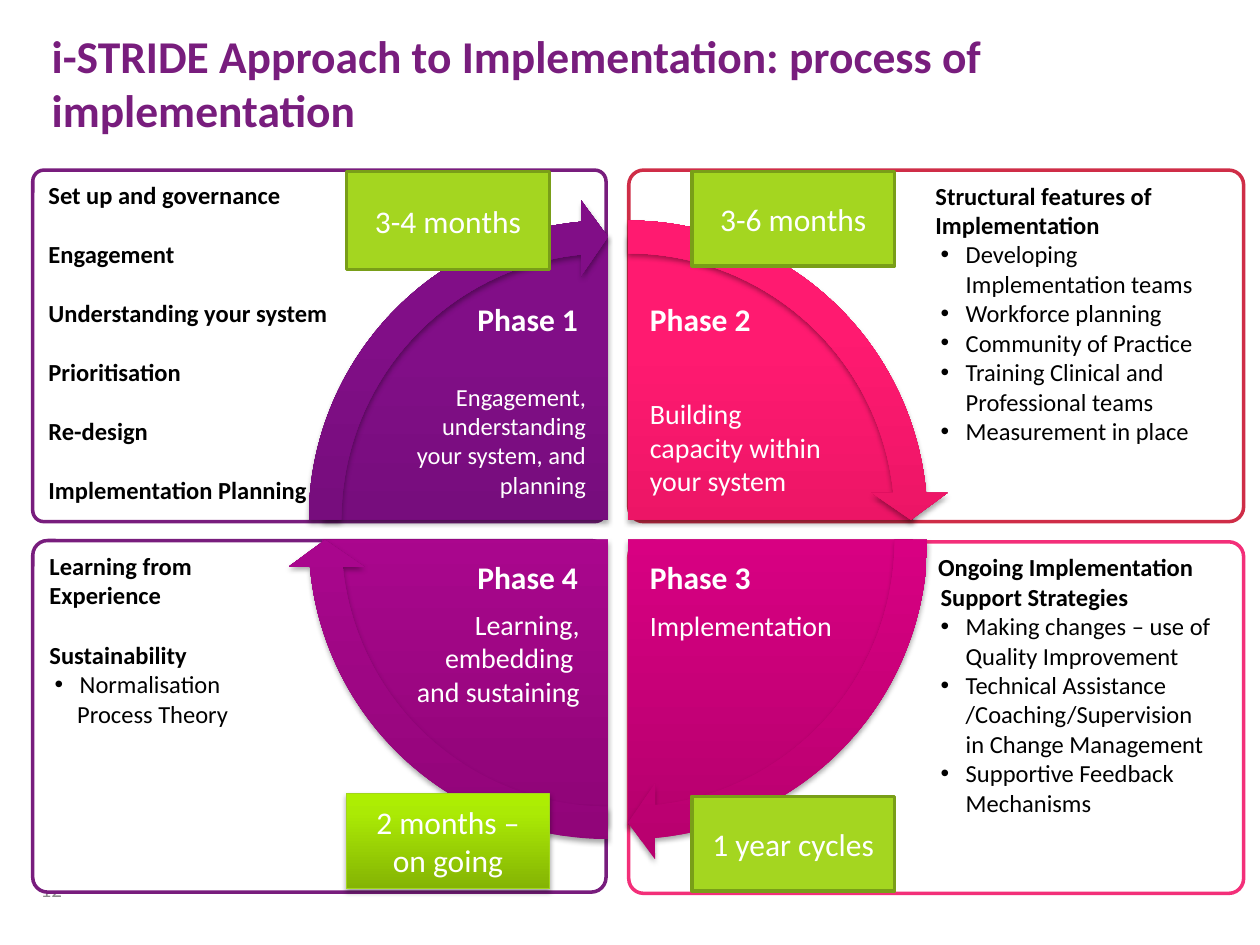
from lxml import etree
from pptx import Presentation
from pptx import util as u
from pptx.dml.color import RGBColor
from pptx.enum import shapes, text
from pptx.oxml import ns

FONT = "Calibri"
COLORS = {
    "purple": "781D7D", "pink": "F32F79", "red": "CF2D47", "black": "000000",
    "white": "FFFFFF", "grey": "8C8C8C", "lime": "A4D620",
    "olive": "799E18", "lime_edge": "A2D61B",
}
# Gradient stops at 0, 80 and 100 percent, from bottom to top
GRADIENTS = {
    "phase 1": ("630B68", "810E87", "830C8A"),
    "phase 2": ("CB0D55", "FF1A70", "FF1B71"),
    "phase 3": ("B7006E", "ED008F", "EE008F"),
    "phase 4": ("8F0577", "BA079B", "BE049E"),
    "lime": ("84B404", "ABEA05", "AEEF00"),
}
RIGHT, CENTER = text.PP_ALIGN.RIGHT, text.PP_ALIGN.CENTER
BLANK_LINE = 17  # points, one 14 pt line
QUARTER = 54  # 90 degrees in adjustment units


def rgb(name):
    return RGBColor.from_string(COLORS[name])


def add_element(parent, tag, **attributes):
    element = etree.SubElement(parent, ns.qn(tag))
    for key, value in attributes.items():
        element.set(key, str(value))
    return element


def write(paragraph, words, size=14, color="black", bold=False, align=None,
          before=0, margin=0, indent=0, bullet=False):
    paragraph.alignment = align or text.PP_ALIGN.LEFT
    paragraph.space_before = u.Pt(before)
    paragraph.text = words
    for run in paragraph.runs:
        run.font.name = FONT
        run.font.size = u.Pt(size)
        run.font.bold = bold
        run.font.color.rgb = rgb(color)
    properties = paragraph._p.get_or_add_pPr()
    properties.set("marL", str(u.Inches(margin)))
    properties.set("indent", str(u.Inches(indent)))
    if bullet:
        add_element(properties, "a:buFont", typeface="Arial")
        add_element(properties, "a:buChar", char="•")
    else:
        add_element(properties, "a:buNone")


def fill_gradient(shape, stops):
    shape.fill.background()
    blank = shape._element.spPr.find(ns.qn("a:noFill"))
    gradient = etree.Element(ns.qn("a:gradFill"), rotWithShape="1")
    stop_list = add_element(gradient, "a:gsLst")
    for position, color in zip((0, 80, 100), stops):
        stop = add_element(stop_list, "a:gs", pos=position * 1000)
        add_element(stop, "a:srgbClr", val=color)
    add_element(gradient, "a:lin", ang=270 * 60000, scaled=0)
    blank.getparent().replace(blank, gradient)


def add_shadow(shape):
    effects = shape._element.spPr.find(ns.qn("a:effectLst"))
    shadow = add_element(effects, "a:outerShdw", blurRad=u.Pt(3.1), dist=u.Pt(1.8),
                         dir=90 * 60000, rotWithShape=0)
    color = add_element(shadow, "a:srgbClr", val=COLORS["black"])
    add_element(color, "a:alpha", val=35000)


def add_figure(slide, kind, box, fill=None, gradient=None, line=None,
               line_width=2, adjustments=()):
    shape = slide.shapes.add_shape(kind, *map(u.Inches, box))
    shape.shadow.inherit = False
    for index, value in enumerate(adjustments):
        shape.adjustments[index] = value
    if line:
        shape.line.color.rgb = rgb(line)
        shape.line.width = u.Pt(line_width)
    else:
        shape.line.fill.background()
    if gradient:
        fill_gradient(shape, GRADIENTS[gradient])
        add_shadow(shape)
    else:
        shape.fill.solid()
        shape.fill.fore_color.rgb = rgb(fill)
    return shape


def add_label(slide, box, words, wrap=True, anchor=text.MSO_ANCHOR.TOP, **style):
    frame = slide.shapes.add_textbox(*map(u.Inches, box)).text_frame
    frame.word_wrap = wrap
    frame.vertical_anchor = anchor
    write(frame.paragraphs[0], words, **style)


def add_panel(slide, box, line, corner, insets, items):
    panel = add_figure(slide, shapes.MSO_SHAPE.ROUNDED_RECTANGLE, box,
                       fill="white", line=line, adjustments=[corner])
    frame = panel.text_frame
    frame.word_wrap = True
    frame.vertical_anchor = text.MSO_ANCHOR.TOP
    frame.margin_left, frame.margin_right = map(u.Inches, insets)
    for index, (words, style) in enumerate(items):
        paragraph = frame.add_paragraph() if index else frame.paragraphs[0]
        write(paragraph, words, **style)


def add_timing(slide, box, words, **look):
    frame = add_figure(slide, shapes.MSO_SHAPE.RECTANGLE, box, **look).text_frame
    frame.word_wrap = True
    frame.vertical_anchor = text.MSO_ANCHOR.MIDDLE
    write(frame.paragraphs[0], words, size=18, color="white", align=CENTER)


def add_title(slide):
    title = slide.shapes.title
    title.left, title.top, title.width, title.height = map(u.Inches, (0.31, 0.17, 8.84, 0.99))
    title.text_frame.word_wrap = True
    title.text_frame.vertical_anchor = text.MSO_ANCHOR.TOP
    write(title.text_frame.paragraphs[0],
          "i-STRIDE Approach to Implementation: process of implementation",
          size=26, color="purple", bold=True)


def add_panels(slide):
    head = {"bold": True}
    spaced = {"bold": True, "before": BLANK_LINE}
    bullet = {"margin": 0.55, "indent": -0.2, "bullet": True}
    left_insets, right_insets = (0.1, 0.63), (2.09, 0.2)

    add_panel(slide, (0.26, 4.29, 4.55, 2.79), "purple", 0.042, left_insets, [
        ("Learning from", head),
        ("Experience", head),
        ("Sustainability", spaced),
        ("Normalisation", {**bullet, "margin": 0.24}),
        ("Process Theory", {"margin": 0.22}),
    ])
    add_panel(slide, (4.99, 4.3, 4.88, 2.79), "pink", 0.042, right_insets, [
        ("Ongoing Implementation", {**head, "margin": 0.33}),
        ("Support Strategies", {**head, "margin": 0.35}),
        ("Making changes – use of Quality Improvement", bullet),
        ("Technical Assistance /Coaching/Supervision in Change Management", bullet),
        ("Supportive Feedback Mechanisms", bullet),
    ])
    practices = ["Developing Implementation teams", "Workforce planning",
                 "Community of Practice", "Training Clinical and Professional teams",
                 "Measurement in place"]
    add_panel(slide, (4.99, 1.35, 4.88, 2.79), "red", 0.042, right_insets,
              [("Structural features of Implementation", {**head, "margin": 0.31})]
              + [(practice, bullet) for practice in practices])
    steps = ["Engagement", "Understanding your system", "Prioritisation",
             "Re-design", "Implementation Planning"]
    add_panel(slide, (0.26, 1.35, 4.55, 2.79), "purple", 0.032, left_insets,
              [("Set up and governance", head)] + [(step, spaced) for step in steps])


def add_wheel(slide):
    # Each quarter: gradient, pie left and top, start angle
    quarters = [
        ("phase 2", 2.72, 1.86, 3 * QUARTER),
        ("phase 3", 2.72, 2.02, 0),
        ("phase 4", 2.56, 2.02, QUARTER),
        ("phase 1", 2.56, 1.86, 2 * QUARTER),
    ]
    for phase, left, top, start in quarters:
        add_figure(slide, shapes.MSO_SHAPE.PIE, (left, top, 4.53, 4.53), gradient=phase,
                   adjustments=[start, (start + QUARTER) % (4 * QUARTER)])
    head_angle = 3.275
    for phase, left, top, start in quarters:
        add_figure(slide, shapes.MSO_SHAPE.CIRCULAR_ARROW,
                   (left - 0.28, top - 0.28, 5.09, 5.09), gradient=phase,
                   adjustments=[0.051, head_angle, start + QUARTER - head_angle, start, 0.059])

    # Phase names and descriptions
    for number, left, top in ((1, 3.69, 2.33), (2, 5.06, 2.33), (3, 5.06, 4.38), (4, 3.69, 4.38)):
        add_label(slide, (left, top, 1.01, 0.4), f"Phase {number}", wrap=False,
                  size=18, color="white", bold=True)
    for box, words, size, align in (
        ((3.11, 2.98, 1.64, 1.04), "Engagement, understanding your system, and planning", 14, RIGHT),
        ((3.06, 4.77, 1.64, 0.91), "Learning, embedding \vand sustaining", 16, RIGHT),
        ((5.06, 3.1, 1.61, 0.91), "Building capacity within your system", 16, None),
        ((5.06, 4.78, 1.77, 0.37), "Implementation", 16, None),
    ):
        add_label(slide, box, words, size=size, color="white", align=align)


def add_timings(slide):
    flat = {"fill": "lime", "line": "olive"}
    glossy = {"gradient": "lime", "line": "lime_edge", "line_width": 0.75}
    for left, top, height, words, look in (
        (2.75, 1.36, 0.78, "3-4 months", flat),
        (5.49, 1.36, 0.75, "3-6 months", flat),
        (2.75, 6.3, 0.75, "2 months – on going", glossy),
        (5.49, 6.32, 0.75, "1 year cycles", flat),
    ):
        add_timing(slide, (left, top, 1.61, height), words, **look)


def main():
    presentation = Presentation()
    presentation.slide_width, presentation.slide_height = u.Inches(10), u.Inches(7.5)
    slide = presentation.slides.add_slide(presentation.slide_layouts[5])
    add_title(slide)
    # Page number, behind the panels
    add_label(slide, (0.12, 6.86, 0.47, 0.4), "12", anchor=text.MSO_ANCHOR.MIDDLE,
              size=12, color="grey", align=RIGHT)
    add_panels(slide)
    add_wheel(slide)
    add_timings(slide)
    presentation.save("out.pptx")


if __name__ == "__main__":
    main()
